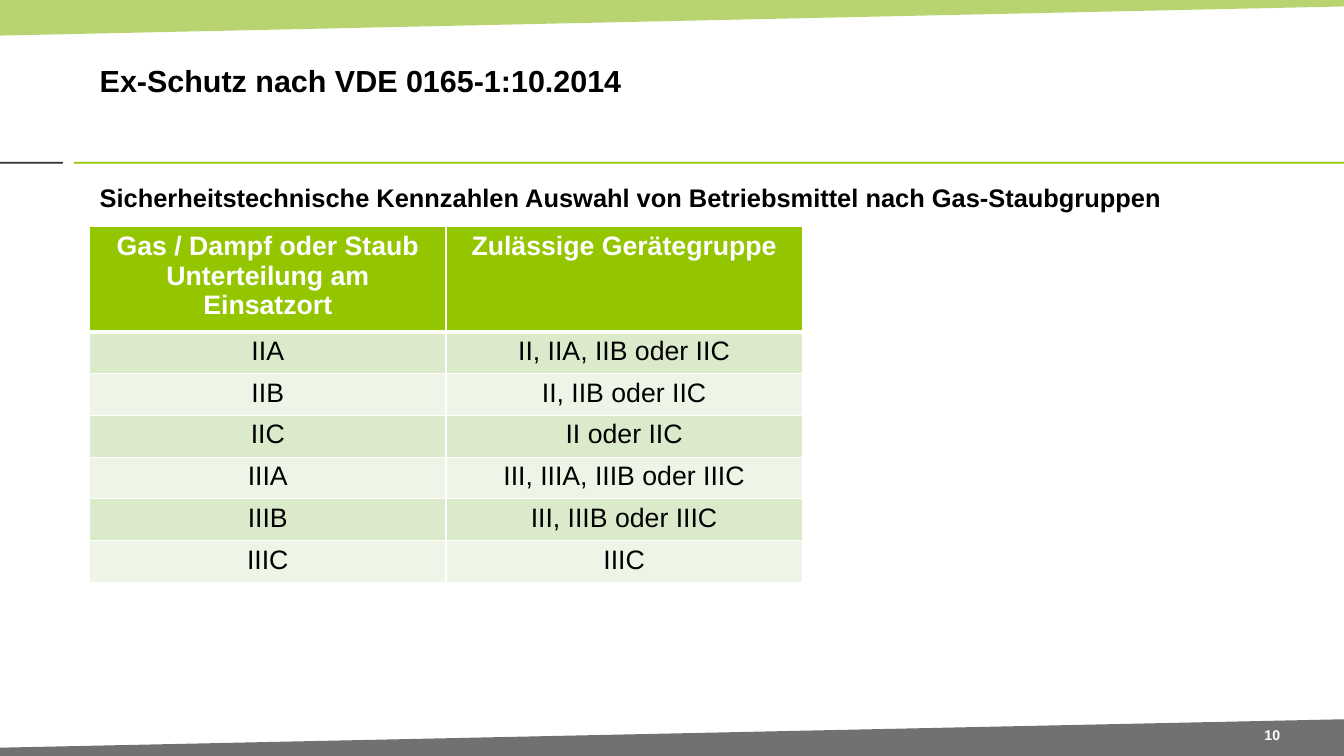
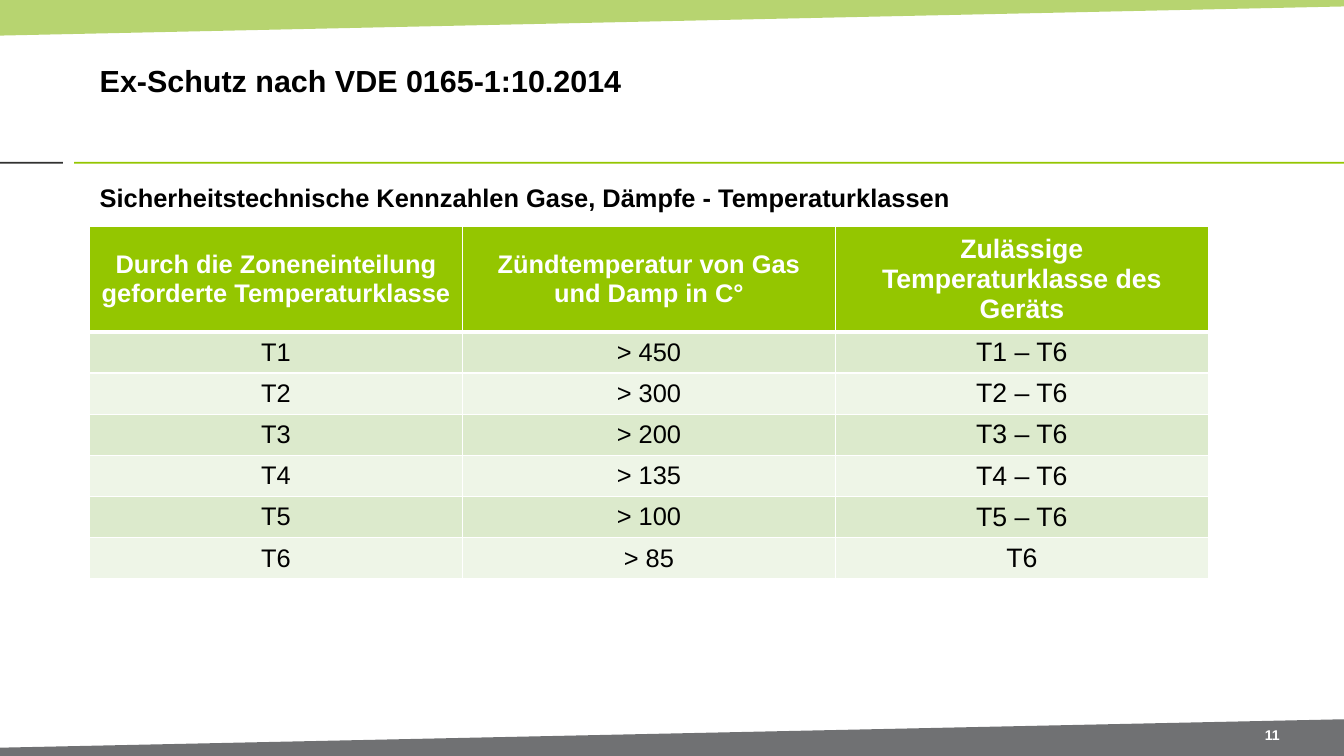
from lxml.etree import SubElement
from pptx import Presentation
from pptx.dml.color import RGBColor
from pptx.enum.shapes import MSO_SHAPE
from pptx.enum.text import MSO_ANCHOR, PP_ALIGN
from pptx.oxml import parse_xml
from pptx.oxml.ns import nsdecls, qn
from pptx.util import Cm, Pt

COLORS = {
    "top_band": "95C02A",
    "bottom_band": "707173",
    "dark_rule": "313130",
    "green": "94C600",
    "odd_row": "DCEACC",
    "even_row": "EEF5E7",
    "white": "FFFFFF",
    "black": "000000",
}
FONT = "Arial"
TITLE = "Ex-Schutz nach VDE 0165-1:10.2014"
SLIDES = [
    {
        "number": "10",
        "subtitle": "Sicherheitstechnische Kennzahlen Auswahl von Betriebsmittel "
                    "nach Gas-Staubgruppen",
        "rows": [
            ("Gas / Dampf oder Staub\vUnterteilung am Einsatzort", "Zulässige Gerätegruppe"),
            ("IIA", "II, IIA, IIB oder IIC"),
            ("IIB", "II, IIB oder IIC"),
            ("IIC", "II oder IIC"),
            ("IIIA", "III, IIIA, IIIB oder IIIC"),
            ("IIIB", "III, IIIB oder IIIC"),
            ("IIIC", "IIIC"),
        ],
        "column_width": 9.9,
        "row_height": 1.16,
        "sizes": (21, 21),
        "anchor": MSO_ANCHOR.TOP,
    },
    {
        "number": "11",
        "subtitle": "Sicherheitstechnische Kennzahlen Gase, Dämpfe - Temperaturklassen",
        "rows": [
            ("Durch die Zoneneinteilung geforderte Temperaturklasse",
             "Zündtemperatur von Gas und Damp in C°",
             "Zulässige Temperaturklasse des Geräts"),
            ("T1", "> 450", "T1 – T6"),
            ("T2", "> 300", "T2 – T6"),
            ("T3", "> 200", "T3 – T6"),
            ("T4", "> 135", "T4 – T6"),
            ("T5", "> 100", "T5 – T6"),
            ("T6", "> 85", "T6"),
        ],
        "column_width": 10.36,
        "row_height": 1.08,
        "sizes": (20, 20, 21),
        "anchor": MSO_ANCHOR.MIDDLE,
    },
]

WIDTH, HEIGHT = 37.34, 21.01
LEFT, CONTENT_WIDTH = 2.49, 33.3
TABLE_TOP, HEADER_HEIGHT = 6.3, 2.75
TOP_BAND = [(0, 0), (WIDTH, 0), (WIDTH, 0.18), (0, 0.99)]
BOTTOM_BAND = [(0, HEIGHT), (0, 20.78), (WIDTH, 19.99), (WIDTH, HEIGHT)]
RULE_TOP, RULE_HEIGHT = 4.5, 0.05
RULES = [(0, 1.75, "dark_rule"), (2.06, WIDTH - 2.06, "green")]


def color(name):
    return RGBColor.from_string(COLORS[name])


def paint(shape, fill):
    shape.shadow.inherit = False
    shape.fill.solid()
    shape.fill.fore_color.rgb = color(fill)
    shape.line.fill.background()


def add_band(shapes, points, fill):
    start, *others = [(Cm(x), Cm(y)) for x, y in points]
    builder = shapes.build_freeform(*start)
    builder.add_line_segments(others, close=True)
    band = builder.convert_to_shape()
    paint(band, fill)
    return band


def decorate_layout(layout, slide):
    """Draw the bands and rules on the slide, then move them to its layout."""
    for placeholder in list(layout.placeholders)[1:]:
        layout.shapes.element.remove(placeholder.element)
    top_band = add_band(slide.shapes, TOP_BAND, "top_band")
    fill_color = top_band.element.spPr.find(qn("a:solidFill"))[0]
    SubElement(fill_color, qn("a:alpha"), val="67000")
    decorations = [top_band, add_band(slide.shapes, BOTTOM_BAND, "bottom_band")]
    for left, width, fill in RULES:
        rule = slide.shapes.add_shape(
            MSO_SHAPE.RECTANGLE, Cm(left), Cm(RULE_TOP), Cm(width), Cm(RULE_HEIGHT))
        paint(rule, fill)
        decorations.append(rule)
    for shape in decorations:
        layout.shapes.element.append(shape.element)


def set_text(frame, text, size, fill="black", bold=True, align=PP_ALIGN.LEFT):
    frame.text = text
    frame.word_wrap = True
    for para in frame.paragraphs:
        para.alignment = align
        for span in para.runs:
            span.font.name = FONT
            span.font.size = Pt(size)
            span.font.bold = bold
            span.font.color.rgb = color(fill)


def set_margins(frame, anchor):
    frame.margin_left = frame.margin_right = Cm(0.28)
    frame.margin_top = frame.margin_bottom = Cm(0.15)
    frame.vertical_anchor = anchor


def add_title(slide):
    title = slide.shapes.title
    title.left, title.top = Cm(LEFT), Cm(0.71)
    title.width, title.height = Cm(CONTENT_WIDTH), Cm(3.02)
    set_text(title.text_frame, TITLE, 24)
    set_margins(title.text_frame, MSO_ANCHOR.MIDDLE)


def add_label(slide, place, text, size, anchor, **style):
    box = slide.shapes.add_textbox(*map(Cm, place))
    set_text(box.text_frame, text, size, **style)
    set_margins(box.text_frame, anchor)


def set_borders(cell, row):
    widths = {"L": 1, "R": 1, "T": 3 if row == 1 else 1, "B": 3 if row == 0 else 1}
    properties = cell._tc.get_or_add_tcPr()
    for index, (side, width) in enumerate(widths.items()):
        properties.insert(index, parse_xml(
            f'<a:ln{side} {nsdecls("a")} w="{Pt(width)}"><a:solidFill>'
            f'<a:srgbClr val="{COLORS["white"]}"/></a:solidFill></a:ln{side}>'))


def add_data_table(slide, content):
    rows = content["rows"]
    heights = [HEADER_HEIGHT] + [content["row_height"]] * (len(rows) - 1)
    columns = len(rows[0])
    table = slide.shapes.add_table(
        len(rows), columns, Cm(LEFT), Cm(TABLE_TOP),
        Cm(columns * content["column_width"]), Cm(sum(heights))).table
    table.horz_banding = False
    for column in table.columns:
        column.width = Cm(content["column_width"])
    for row, (texts, height) in enumerate(zip(rows, heights)):
        table.rows[row].height = Cm(height)
        header = row == 0
        fill = "green" if header else "odd_row" if row % 2 else "even_row"
        for column, (text, size) in enumerate(zip(texts, content["sizes"])):
            cell = table.cell(row, column)
            set_text(cell.text_frame, text, size, "white" if header else "black",
                     header, PP_ALIGN.CENTER)
            cell.vertical_anchor = content["anchor"]
            cell.fill.solid()
            cell.fill.fore_color.rgb = color(fill)
            set_borders(cell, row)


def main():
    deck = Presentation()
    deck.slide_width, deck.slide_height = Cm(WIDTH), Cm(HEIGHT)
    layout = deck.slide_layouts.get_by_name("Title Only")
    pages = [deck.slides.add_slide(layout) for _ in SLIDES]
    decorate_layout(layout, pages[0])
    for page, content in zip(pages, SLIDES):
        add_title(page)
        add_label(page, (34.26, 20.04, 2.18, 0.74), content["number"], 11.1,
                  MSO_ANCHOR.MIDDLE, fill="white", align=PP_ALIGN.CENTER)
        add_label(page, (LEFT, 4.9, CONTENT_WIDTH, 1.3), content["subtitle"], 20,
                  MSO_ANCHOR.TOP)
        add_data_table(page, content)
    deck.save("out.pptx")


if __name__ == "__main__":
    main()
